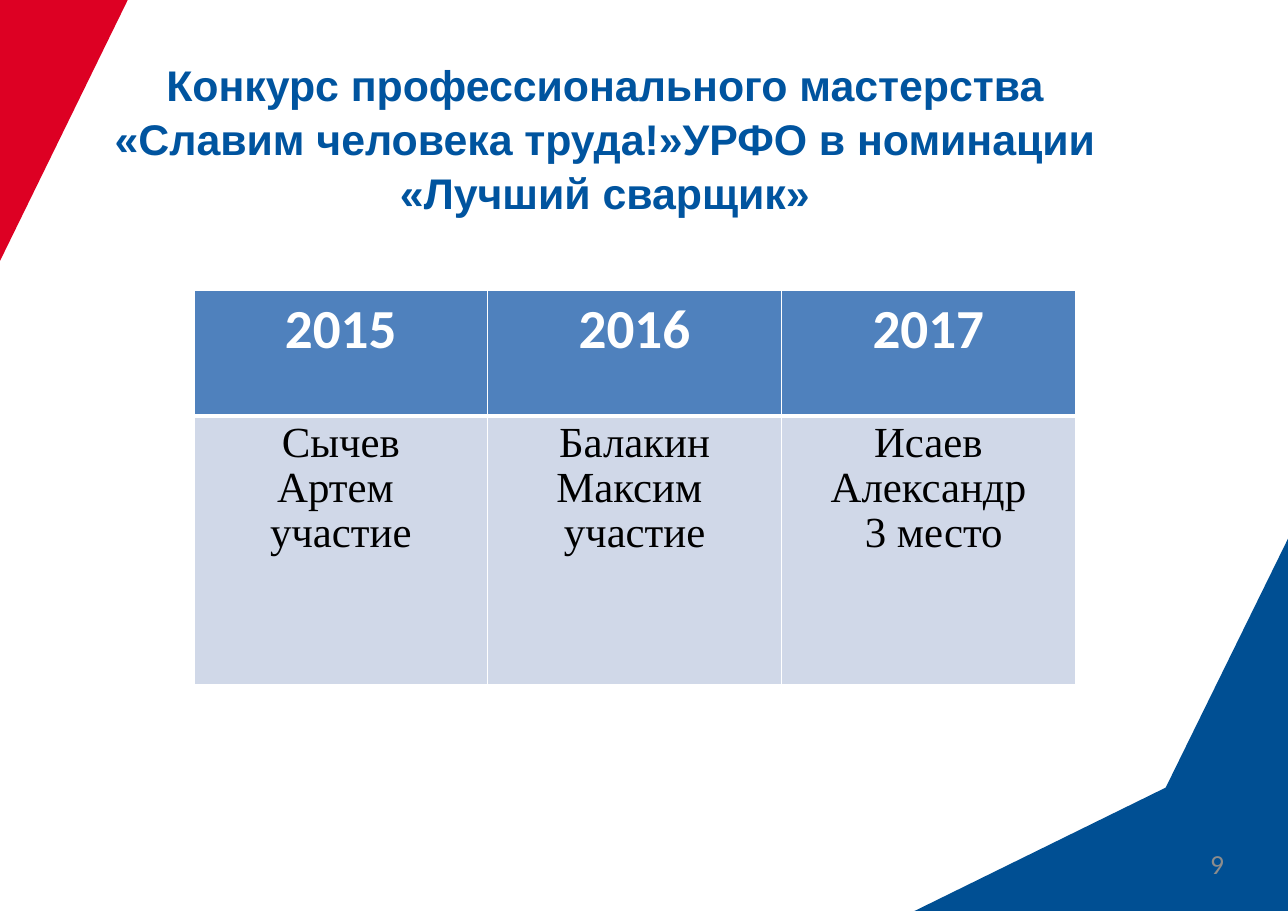
from lxml import etree
from pptx import Presentation
from pptx.dml.color import RGBColor
from pptx.enum.text import MSO_ANCHOR, PP_ALIGN
from pptx.oxml.ns import qn
from pptx.util import Inches, Pt

CENTER, RIGHT = PP_ALIGN.CENTER, PP_ALIGN.RIGHT
TOP = MSO_ANCHOR.TOP


def color(value):
    return RGBColor.from_string(value)


def format_paragraph(p, font, size, fill, bold=False, align=CENTER):
    p.alignment = align
    p.font.name = font
    p.font.size = Pt(size)
    p.font.bold = bold
    p.font.color.rgb = color(fill)


prs = Presentation()
prs.slide_width = Inches(11.69)
prs.slide_height = Inches(8.27)
s = prs.slides.add_slide(prs.slide_layouts[5])

corners = [
    ("DD0023", [(0, 0), (1.16, 0), (0, 2.37)]),
    ("004F93", [(11.69, 4.89), (10.58, 7.15), (8.3, 8.27), (11.69, 8.27)]),
]
for fill, points in corners:
    points = [(Inches(x), Inches(y)) for x, y in points]
    builder = s.shapes.build_freeform(*points[0])
    builder.add_line_segments(points[1:])
    sp = builder.convert_to_shape()
    sp.shadow.inherit = False
    sp.fill.solid()
    sp.fill.fore_color.rgb = color(fill)
    sp.line.fill.background()

title = s.shapes.title
title.left, title.top = Inches(0.51), Inches(0.47)
title.width, title.height = Inches(9.96), Inches(7.43)
tf = title.text_frame
tf.word_wrap = True
tf.vertical_anchor = TOP
tf.margin_left = tf.margin_right = Inches(0.35)
tf.margin_top = tf.margin_bottom = Inches(0.04)
tf.text = ("Конкурс профессионального мастерства «Славим человека труда!»УРФО "
           "в номинации «Лучший сварщик»")
p = tf.paragraphs[0]
p.line_spacing = 1.05
format_paragraph(p, "Arial", 28, "00549F", bold=True)

number = s.shapes.add_textbox(Inches(8.42), Inches(7.69), Inches(2.69), Inches(0.41))
tf = number.text_frame
tf.word_wrap = True
tf.margin_left = tf.margin_right = tf.margin_top = tf.margin_bottom = 0
tf.text = "9"
format_paragraph(tf.paragraphs[0], "Calibri", 18, "8C8C8C", align=RIGHT)

results = [
    ("2015", "Сычев\nАртем \nучастие"),
    ("2016", "Балакин Максим \nучастие"),
    ("2017", "Исаев\nАлександр\n 3 место"),
]
table = s.shapes.add_table(2, len(results), Inches(1.76), Inches(2.64),
                           Inches(8), Inches(3.58)).table
table.rows[0].height = Inches(1.14)
table.rows[1].height = Inches(2.44)

row_styles = [
    ("4F81BD", "Calibri", 36, "FFFFFF", True, 1),
    ("D0D8E8", "Times New Roman", 28, "000000", False, 0.95),
]
for col, texts in enumerate(results):
    for row, (fill, font, size, ink, bold, spacing) in enumerate(row_styles):
        cell = table.cell(row, col)
        cell.text = texts[row]
        for p in cell.text_frame.paragraphs:
            p.line_spacing = spacing
            format_paragraph(p, font, size, ink, bold)
        tcPr = cell._tc.get_or_add_tcPr()
        for side in ("lnL", "lnR", "lnT", "lnB"):
            middle = (row, side) in ((0, "lnB"), (1, "lnT"))
            ln = etree.SubElement(tcPr, qn("a:" + side), w=str(Pt(3 if middle else 1)))
            line_fill = etree.SubElement(ln, qn("a:solidFill"))
            etree.SubElement(line_fill, qn("a:srgbClr"), val="FFFFFF")
        cell.fill.solid()
        cell.fill.fore_color.rgb = color(fill)

prs.save("out.pptx")
